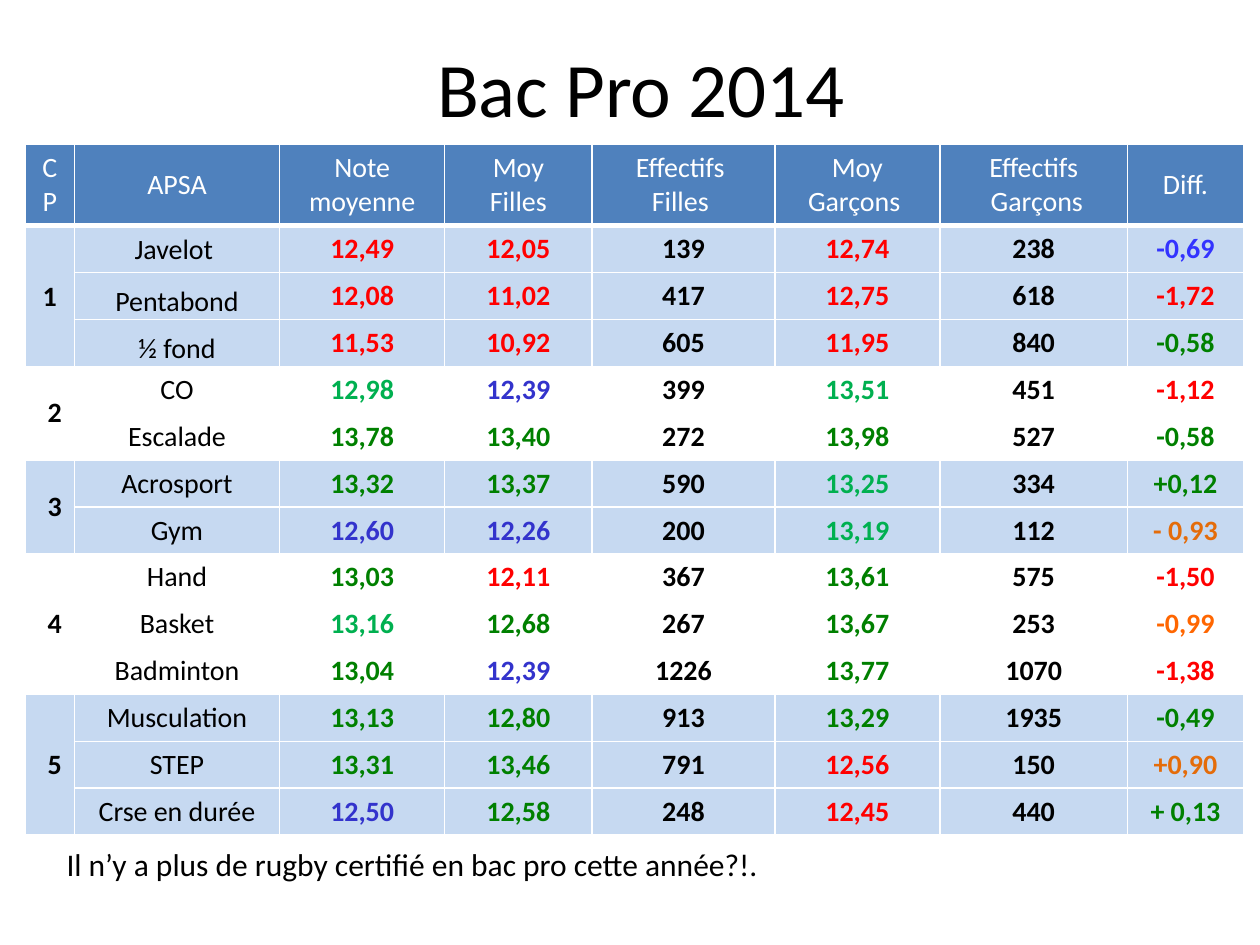
from lxml import etree
from pptx import Presentation, util as u
from pptx.dml.color import RGBColor
from pptx.enum import text
from pptx.oxml.ns import qn

W, H = 10, 7.5
FONT = "Calibri"
COLORS = {
    "header": "4F81BD", "band": "C6D9F1", "white": "FFFFFF", "k": "000000",
    "r": "FF0000", "g": "008000", "e": "00B050", "b": "3333CC",
    "v": "3333FF", "o": "E46C0A", "f": "FF6600",
}
COLS = [0.39, 1.63, 1.31, 1.17, 1.45, 1.31, 1.49, 0.92]
HEADER_H, ROW_H = 0.64, 0.37
HEADERS = ["CP", "APSA", "Note moyenne", "Moy\nFilles", "Effectifs \nFilles ",
           "Moy\nGarçons ", "Effectifs\n Garçons", "Diff."]
GROUPS = [
    [("Javelot ", "12,49", "12,05", "139", "12,74", "238", "-0,69", "rrkrkv"),
     ("Pentabond", "12,08", "11,02", "417", "12,75", "618", "-1,72", "rrkrkr"),
     ("½ fond", "11,53", "10,92", "605", "11,95", "840", "-0,58", "rrkrkg")],
    [("CO", "12,98", "12,39", "399", "13,51", "451", "-1,12", "ebkekr"),
     ("Escalade", "13,78", "13,40", "272", "13,98", "527", "-0,58", "ggkgkg")],
    [("Acrosport", "13,32", "13,37", "590", "13,25", "334", "+0,12", "ggkekg"),
     ("Gym", "12,60", "12,26", "200", "13,19", "112", "- 0,93", "bbkeko")],
    [("Hand", "13,03", "12,11", "367", "13,61", "575", "-1,50", "grkgkr"),
     ("Basket", "13,16", "12,68", "267", "13,67", "253", "-0,99", "egkgkf"),
     ("Badminton", "13,04", "12,39", "1226", "13,77", "1070", "-1,38", "gbkgkr")],
    [("Musculation", "13,13", "12,80", "913", "13,29", "1935", "-0,49", "ggkgkg"),
     ("STEP", "13,31", "13,46", "791", "12,56", "150", "+0,90", "ggkrko"),
     ("Crse en durée", "12,50", "12,58", "248", "12,45", "440", "+ 0,13", "bgkrkg")],
]


def rgb(name):
    return RGBColor.from_string(COLORS[name])


def write(tf, content, size, color="k", bold=False, align=text.PP_ALIGN.CENTER):
    tf.text = content
    for p in tf.paragraphs:
        p.alignment = align
        for r in p.runs:
            r.font.name = FONT
            r.font.size = u.Pt(size)
            r.font.bold = bold
            r.font.color.rgb = rgb(color)


def set_borders(cell, bottom=1):
    tcPr = cell._tc.get_or_add_tcPr()
    for side, width in (("L", 1), ("R", 1), ("T", 1), ("B", bottom)):
        ln = etree.SubElement(tcPr, qn(f"a:ln{side}"), w=str(u.Pt(width)))
        fill = etree.SubElement(ln, qn("a:solidFill"))
        etree.SubElement(fill, qn("a:srgbClr"), val=COLORS["white"])


def fill_cell(cell, content, fill, color="k", bold=False, bottom=1,
              align=text.PP_ALIGN.CENTER):
    set_borders(cell, bottom)
    cell.fill.solid()
    cell.fill.fore_color.rgb = rgb(fill)
    cell.vertical_anchor = text.MSO_ANCHOR.MIDDLE
    write(cell.text_frame, content, 16, color, bold, align)


def tighten(cell):
    cell.margin_left = cell.margin_right = cell.margin_top = u.Inches(0.01)
    cell.margin_bottom = 0


def add_title(s, content):
    sp = s.shapes.title
    sp.left, sp.top = u.Inches(0.059 * W), u.Inches(0.028 * H)
    sp.width, sp.height = u.Inches(0.9 * W), u.Inches(0.127 * H)
    sp.text_frame.vertical_anchor = text.MSO_ANCHOR.MIDDLE
    write(sp.text_frame, content, 44)


def add_group(tbl, top, number, rows):
    fill = "band" if number % 2 else "white"
    for i, (sport, *values, codes) in enumerate(rows, top):
        fill_cell(tbl.cell(i, 0), "", fill)
        fill_cell(tbl.cell(i, 1), sport, fill)
        for j, (value, code) in enumerate(zip(values, codes), 2):
            fill_cell(tbl.cell(i, j), value, fill, code, True)
    head = tbl.cell(top, 0)
    align = text.PP_ALIGN.CENTER if number == 1 else text.PP_ALIGN.RIGHT
    write(head.text_frame, str(number), 16, bold=True, align=align)
    head.merge(tbl.cell(top + len(rows) - 1, 0))


def add_results(s):
    count = sum(map(len, GROUPS))
    frame = s.shapes.add_table(
        count + 1, len(COLS), u.Inches(0.02 * W), u.Inches(0.153 * H),
        u.Inches(sum(COLS)), u.Inches(HEADER_H + count * ROW_H))
    tbl = frame.table
    for col, width in zip(tbl.columns, COLS):
        col.width = u.Inches(width)
    for i, row in enumerate(tbl.rows):
        row.height = u.Inches(ROW_H if i else HEADER_H)
    for j, label in enumerate(HEADERS):
        fill_cell(tbl.cell(0, j), label, "header", "white", bottom=3)
    top = 1
    for number, rows in enumerate(GROUPS, 1):
        add_group(tbl, top, number, rows)
        top += len(rows)
    tighten(tbl.cell(1, 0))
    for i in (1, 2, 3):
        tighten(tbl.cell(i, 1))
    for i in (2, 3):
        tbl.cell(i, 1).vertical_anchor = text.MSO_ANCHOR.BOTTOM


def add_note(s, content):
    sp = s.shapes.add_textbox(u.Inches(0.043 * W), u.Inches(0.888 * H),
                              u.Inches(0.866 * W), u.Inches(0.4))
    tf = sp.text_frame
    tf.word_wrap = True
    tf.auto_size = text.MSO_AUTO_SIZE.SHAPE_TO_FIT_TEXT
    write(tf, content, 18, align=text.PP_ALIGN.LEFT)


def main():
    prs = Presentation()
    prs.slide_width, prs.slide_height = u.Inches(W), u.Inches(H)
    s = prs.slides.add_slide(prs.slide_layouts[5])
    add_title(s, "Bac Pro 2014")
    add_results(s)
    add_note(s, "Il n’y a plus de rugby certifié en bac pro cette année?!.")
    prs.save("out.pptx")


if __name__ == "__main__":
    main()
